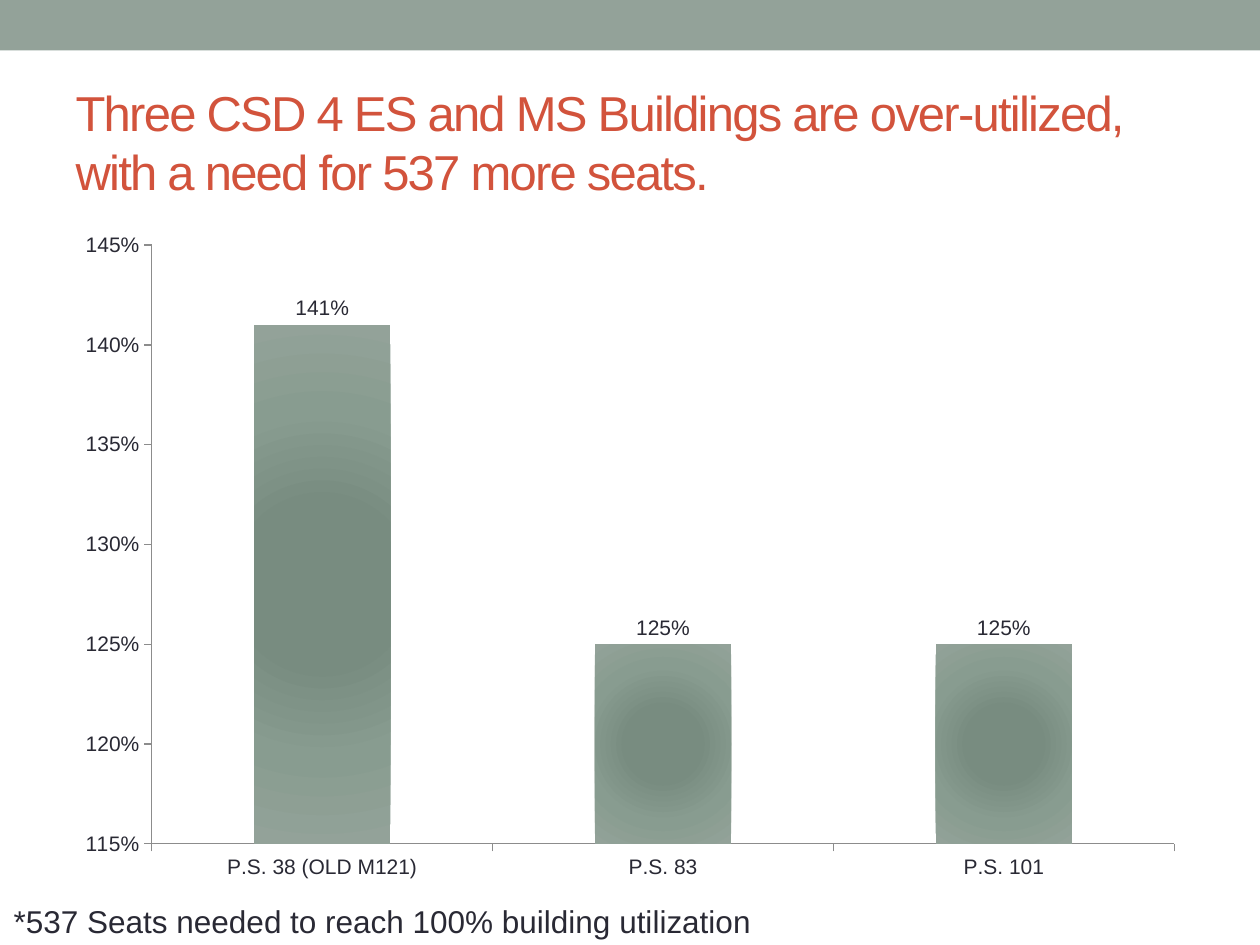
from dataclasses import dataclass

from lxml.etree import SubElement
from pptx import Presentation
from pptx.chart.data import CategoryChartData
from pptx.dml.color import RGBColor
from pptx.enum.chart import XL_CHART_TYPE, XL_LABEL_POSITION, XL_TICK_MARK
from pptx.enum.shapes import MSO_SHAPE
from pptx.enum.text import MSO_ANCHOR, MSO_AUTO_SIZE, PP_ALIGN
from pptx.oxml import parse_xml
from pptx.oxml.ns import nsdecls, qn
from pptx.util import Inches, Pt

SAGE = "93A299"
DARK_SAGE = "788C80"
RUST = "D2533C"
INK = "292934"
AXIS_GRAY = "8C8C8C"


@dataclass
class Building:
    name: str
    utilization: float


BUILDINGS = [
    Building("P.S. 38 (OLD M121)", 1.41),
    Building("P.S. 83", 1.25),
    Building("P.S. 101", 1.25),
]


def color(value: str) -> RGBColor:
    return RGBColor.from_string(value)


def set_values(target, values: dict) -> None:
    for name, value in values.items():
        setattr(target, name, value)


def inches(*lengths: float) -> list:
    return [Inches(length) for length in lengths]


def place(shape, *lengths: float) -> None:
    set_values(shape, dict(zip(("left", "top", "width", "height"), inches(*lengths))))


def format_font(font, size: float, value: str) -> None:
    set_values(font, {"name": "Arial", "size": Pt(size), "bold": False})
    font.color.rgb = color(value)


def add_band(page) -> None:
    band = page.shapes.add_shape(MSO_SHAPE.RECTANGLE, *inches(0, 0, 10, 0.4))
    band.shadow.inherit = False
    band.fill.solid()
    band.fill.fore_color.rgb = color(SAGE)
    band.line.fill.background()


def write_text(box, text: str, size: float, value: str, frame_format: dict):
    set_values(box.text_frame, frame_format)
    para = box.text_frame.paragraphs[0]
    para.alignment = PP_ALIGN.LEFT
    span = para.add_run()
    span.text = text
    format_font(span.font, size, value)
    return span


def add_title(page) -> None:
    title = page.shapes.title
    place(title, 0.5, 0.58, 9, 1.08)
    span = write_text(
        title,
        "Three CSD 4 ES and MS Buildings are over-utilized, with a need for 537 more seats.",
        28,
        RUST,
        {"word_wrap": True, "auto_size": MSO_AUTO_SIZE.NONE, "vertical_anchor": MSO_ANCHOR.MIDDLE},
    )
    span.font._element.set("spc", "-100")


def add_footnote(page) -> None:
    box = page.shapes.add_textbox(*inches(0.01, 7.11, 6.15, 0.4))
    write_text(
        box,
        "*537 Seats needed to reach 100% building utilization",
        18,
        INK,
        {"word_wrap": False, "auto_size": MSO_AUTO_SIZE.SHAPE_TO_FIT_TEXT},
    )


def apply_radial_fill(series) -> None:
    series.format.fill.solid()
    properties = series.format.fill._xPr
    properties.remove(properties.find(qn("a:solidFill")))
    gradient = parse_xml(f"<a:gradFill {nsdecls('a')} rotWithShape='1'/>")
    stops = SubElement(gradient, qn("a:gsLst"))
    for position, value in ((0, DARK_SAGE), (30000, DARK_SAGE), (65000, "889C90"), (100000, SAGE)):
        stop = SubElement(stops, qn("a:gs"), pos=str(position))
        SubElement(stop, qn("a:srgbClr"), val=value)
    circle = SubElement(gradient, qn("a:path"), path="circle")
    SubElement(circle, qn("a:fillToRect"), l="50000", t="50000", r="50000", b="50000")
    properties.insert(0, gradient)


def format_axis(axis) -> None:
    set_values(axis, {
        "has_major_gridlines": False,
        "major_tick_mark": XL_TICK_MARK.OUTSIDE,
        "minor_tick_mark": XL_TICK_MARK.NONE,
    })
    format_font(axis.tick_labels.font, 12, INK)
    axis.format.line.width = Pt(0.75)
    axis.format.line.color.rgb = color(AXIS_GRAY)


def add_utilization_chart(page) -> None:
    data = CategoryChartData(number_format="0%")
    data.categories = [building.name for building in BUILDINGS]
    data.add_series("Series 1", [building.utilization for building in BUILDINGS])
    frame = page.shapes.add_chart(
        XL_CHART_TYPE.COLUMN_CLUSTERED, *inches(0.5, 1.75, 9, 5.33), data
    )
    chart = frame.chart
    set_values(chart, {"has_legend": False, "has_title": False})
    format_font(chart.font, 10, INK)
    for axis in (chart.category_axis, chart.value_axis):
        format_axis(axis)
    set_values(chart.value_axis, {"minimum_scale": 1.15, "maximum_scale": 1.45, "major_unit": 0.05})
    number_format = {"number_format": "0%", "number_format_is_linked": False}
    set_values(chart.value_axis.tick_labels, number_format)
    plot = chart.plots[0]
    set_values(plot, {"gap_width": 150, "vary_by_categories": False})
    series = plot.series[0]
    apply_radial_fill(series)
    labels = series.data_labels
    set_values(labels, {
        **number_format,
        "show_value": True,
        "position": XL_LABEL_POSITION.OUTSIDE_END,
    })
    format_font(labels.font, 12, INK)


def main() -> None:
    deck = Presentation()
    set_values(deck, {"slide_width": Inches(10), "slide_height": Inches(7.5)})
    page = deck.slides.add_slide(deck.slide_layouts[5])
    add_band(page)
    add_title(page)
    add_footnote(page)
    add_utilization_chart(page)
    deck.save("out.pptx")


if __name__ == "__main__":
    main()
